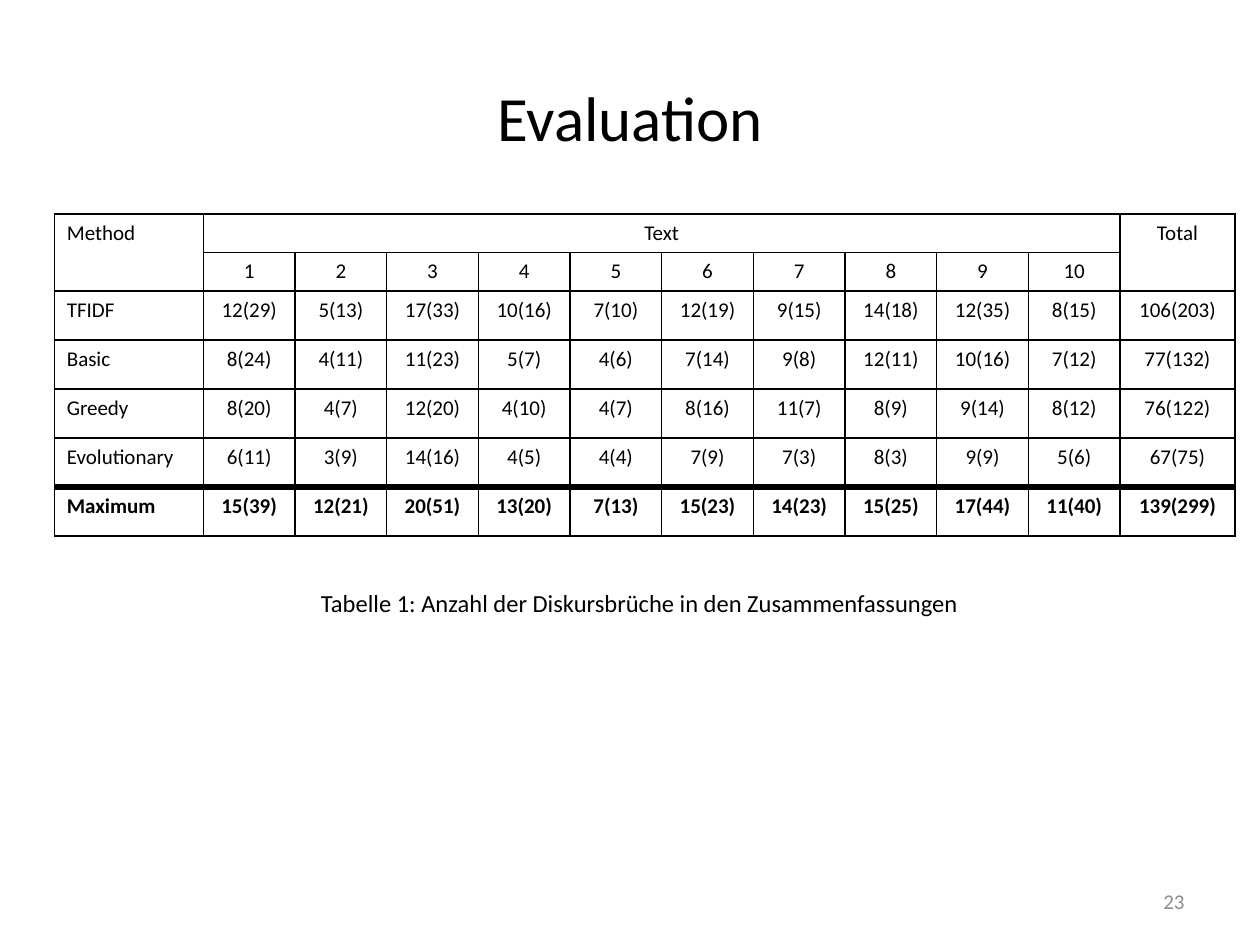
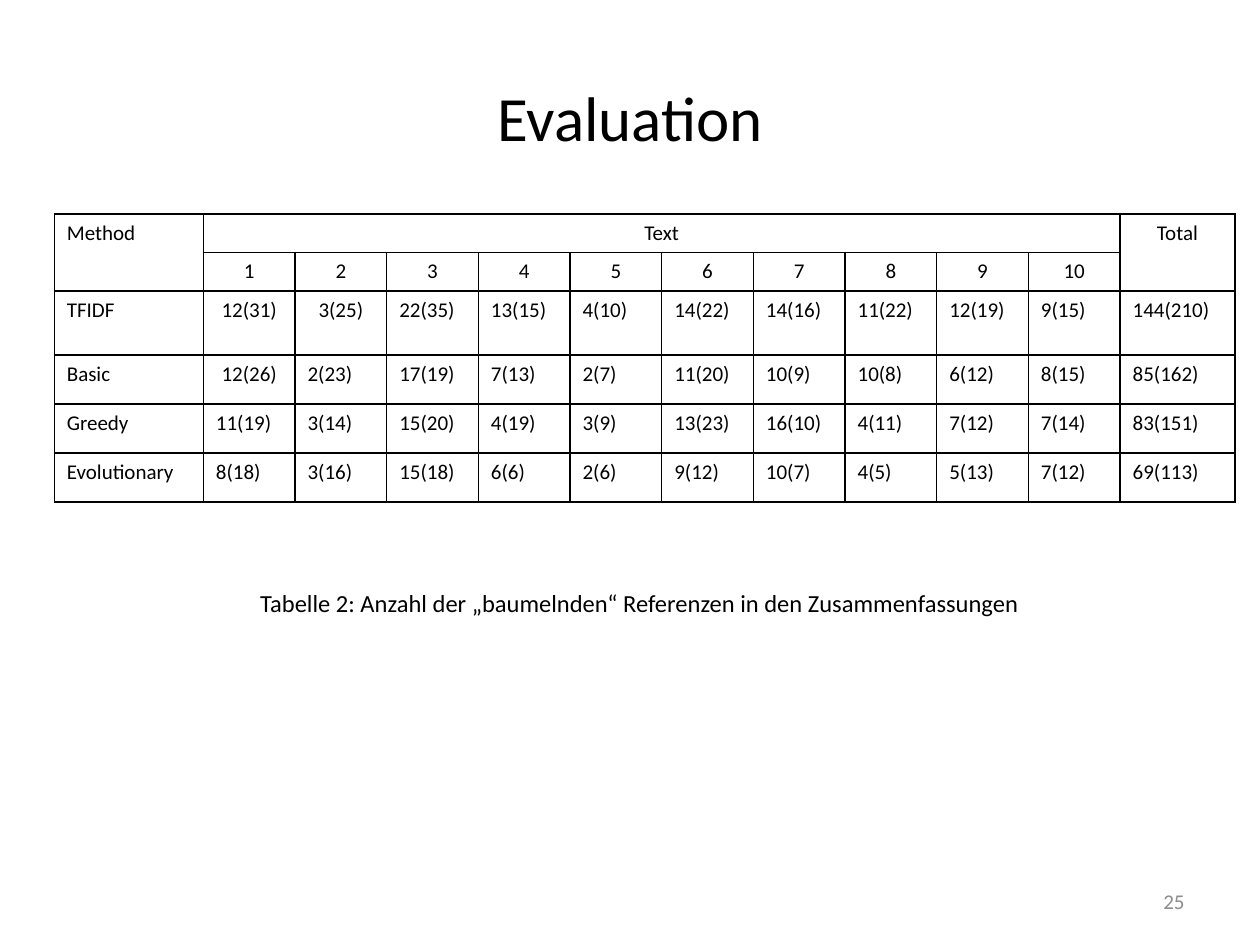
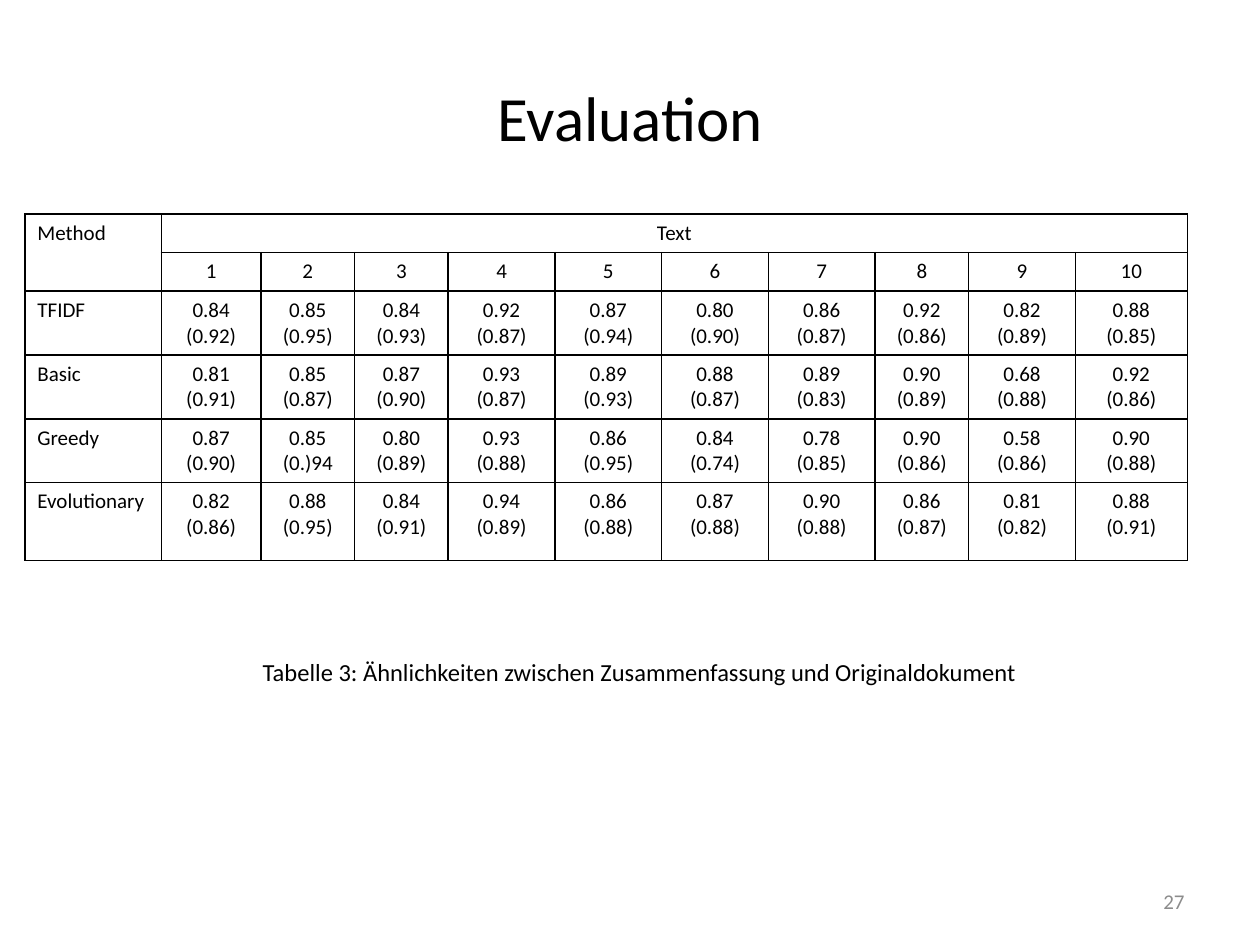
from dataclasses import dataclass
from itertools import product

from lxml.etree import SubElement
from pptx import Presentation
from pptx.dml.color import RGBColor
from pptx.enum.text import MSO_ANCHOR as Anchor, MSO_AUTO_SIZE as AutoSize, PP_ALIGN as Align
from pptx.oxml import parse_xml
from pptx.oxml.ns import nsdecls, qn
from pptx.util import Pt


@dataclass(frozen=True)
class Theme:
    """Colours, type sizes and line widths shared by all slides."""
    font: str = "Calibri"
    ink: str = "000000"
    muted: str = "8C8C8C"
    title_size: float = 36
    caption_size: float = 14
    body_size: float = 12
    rule: float = 1
    heavy_rule: float = 4


@dataclass(frozen=True)
class Evaluation:
    """One table of results with its geometry, caption and page number."""
    page: int
    caption: str
    results: tuple
    left: float
    widths: tuple
    heights: tuple
    caption_top: float = 332.6
    centred: tuple = (10, 10, 10, 10, 10)
    total: bool = True
    stacked: bool = False


THEME = Theme()
TEXT_COUNT = 10
HEADER_ROWS = 2
HEADER_HEIGHTS = (22, 22)
TABLE_TOP = 122.4
COUNT_WIDTHS = (85.2, *[52.4] * TEXT_COUNT, 65.6)

EVALUATIONS = (
    Evaluation(
        page=23,
        caption="Tabelle 1: Anzahl der Diskursbrüche in den Zusammenfassungen",
        results=(
            "TFIDF 12(29) 5(13) 17(33) 10(16) 7(10) 12(19) 9(15) 14(18) 12(35) 8(15) 106(203)",
            "Basic 8(24) 4(11) 11(23) 5(7) 4(6) 7(14) 9(8) 12(11) 10(16) 7(12) 77(132)",
            "Greedy 8(20) 4(7) 12(20) 4(10) 4(7) 8(16) 11(7) 8(9) 9(14) 8(12) 76(122)",
            "Evolutionary 6(11) 3(9) 14(16) 4(5) 4(4) 7(9) 7(3) 8(3) 9(9) 5(6) 67(75)",
            "Maximum 15(39) 12(21) 20(51) 13(20) 7(13) 15(23) 14(23) 15(25) 17(44) 11(40) 139(299)",
        ),
        left=31, widths=COUNT_WIDTHS, heights=(28,) * 5, centred=(11,) * 5,
    ),
    Evaluation(
        page=25,
        caption="Tabelle 2: Anzahl der „baumelnden“ Referenzen in den Zusammenfassungen",
        results=(
            "TFIDF 12(31) 3(25) 22(35) 13(15) 4(10) 14(22) 14(16) 11(22) 12(19) 9(15) 144(210)",
            "Basic 12(26) 2(23) 17(19) 7(13) 2(7) 11(20) 10(9) 10(8) 6(12) 8(15) 85(162)",
            "Greedy 11(19) 3(14) 15(20) 4(19) 3(9) 13(23) 16(10) 4(11) 7(12) 7(14) 83(151)",
            "Evolutionary 8(18) 3(16) 15(18) 6(6) 2(6) 9(12) 10(7) 4(5) 5(13) 7(12) 69(113)",
        ),
        left=31, widths=COUNT_WIDTHS, heights=(36.5, 28, 28, 28), centred=(2, 1, 0, 0),
    ),
    Evaluation(
        page=27,
        caption="Tabelle 3: Ähnlichkeiten zwischen Zusammenfassung und Originaldokument",
        results=(
            "TFIDF 0.84(0.92) 0.85(0.95) 0.84(0.93) 0.92(0.87) 0.87(0.94)"
            " 0.80(0.90) 0.86(0.87) 0.92(0.86) 0.82(0.89) 0.88(0.85)",
            "Basic 0.81(0.91) 0.85(0.87) 0.87(0.90) 0.93(0.87) 0.89(0.93)"
            " 0.88(0.87) 0.89(0.83) 0.90(0.89) 0.68(0.88) 0.92(0.86)",
            "Greedy 0.87(0.90) 0.85(0.)94 0.80(0.89) 0.93(0.88) 0.86(0.95)"
            " 0.84(0.74) 0.78(0.85) 0.90(0.86) 0.58(0.86) 0.90(0.88)",
            "Evolutionary 0.82(0.86) 0.88(0.95) 0.84(0.91) 0.94(0.89) 0.86(0.88)"
            " 0.87(0.88) 0.90(0.88) 0.86(0.87) 0.81(0.82) 0.88(0.91)",
        ),
        left=14.2, widths=(78, 57, 53.5, 53.5, 61, 61, 61, 61, 53.5, 61, 64),
        heights=(36.5, 36.5, 36.5, 44.4), caption_top=372.2, total=False, stacked=True,
    ),
)


def apply_format(target, values):
    """Set each named attribute of the target."""
    for attribute, value in values.items():
        setattr(target, attribute, value)


def write(frame, wording, size, align, color=THEME.ink, bold=False):
    """Fill a text frame with uniformly formatted paragraphs."""
    frame.text = wording
    for paragraph in frame.paragraphs:
        paragraph.alignment = align
        for run in paragraph.runs:
            apply_format(run.font, {"name": THEME.font, "size": Pt(size), "bold": bold})
            run.font.color.rgb = RGBColor.from_string(color)


def add_label(slide, bounds, wording, size, align, layout, color=THEME.ink):
    """Add a wrapped line of text within bounds given in points."""
    frame = slide.shapes.add_textbox(*map(Pt, bounds)).text_frame
    apply_format(frame, {"word_wrap": True, **layout})
    write(frame, wording, size, align, color)


def rule_cell(cell, widths):
    """Clear the cell's fill and draw its four borders."""
    cell.fill.background()
    properties = cell._tc.get_or_add_tcPr()
    for position, side in enumerate("LRTB"):
        width = Pt(widths.get(side, THEME.rule))
        border = parse_xml(f'<a:ln{side} {nsdecls("a")} w="{width}"/>')
        solid = SubElement(border, qn("a:solidFill"))
        SubElement(solid, qn("a:srgbClr"), val=THEME.ink)
        properties.insert(position, border)


def add_header(table, has_total):
    """Merge and label the two header rows."""
    spans = [("Method", 0, 0, 1, 0, Align.LEFT), ("Text", 0, 1, 0, TEXT_COUNT, Align.CENTER)]
    if has_total:
        total_column = TEXT_COUNT + 1
        spans.append(("Total", 0, total_column, 1, total_column, Align.CENTER))
    for heading, top, left, bottom, right, align in spans:
        origin = table.cell(top, left)
        origin.merge(table.cell(bottom, right))
        write(origin.text_frame, heading, THEME.body_size, align)
    for number in range(1, TEXT_COUNT + 1):
        write(table.cell(1, number).text_frame, str(number), THEME.body_size, Align.CENTER)


def add_results(table, evaluation):
    """Write one row of values per summarisation method."""
    rows = zip(evaluation.results, evaluation.centred)
    for row, (result, centred) in enumerate(rows, HEADER_ROWS):
        method, *scores = result.split()
        for column, score in enumerate([method, *scores]):
            align = Align.CENTER if 1 <= column <= centred else Align.LEFT
            wording = score.replace("(", "\n(") if evaluation.stacked else score
            write(table.cell(row, column).text_frame, wording, THEME.body_size, align,
                  bold=method == "Maximum")


def add_evaluation_table(slide, evaluation):
    """Add the ruled table of one evaluation."""
    widths, heights = evaluation.widths, HEADER_HEIGHTS + evaluation.heights
    bounds = (evaluation.left, TABLE_TOP, sum(widths), sum(heights))
    table = slide.shapes.add_table(len(heights), len(widths), *map(Pt, bounds)).table
    apply_format(table, {"first_row": False, "horz_banding": False})
    for column, width in zip(table.columns, widths):
        column.width = Pt(width)
    for row, height in zip(table.rows, heights):
        row.height = Pt(height)
    add_header(table, evaluation.total)
    add_results(table, evaluation)

    heavy_sides = {}
    for row, result in enumerate(evaluation.results, HEADER_ROWS):
        if result.startswith("Maximum"):
            heavy_sides = {row - 1: {"B": THEME.heavy_rule}, row: {"T": THEME.heavy_rule}}
    for row, column in product(range(len(heights)), range(len(widths))):
        rule_cell(table.cell(row, column), heavy_sides.get(row, {}))


def add_evaluation_slide(deck, evaluation):
    """Add a slide with title, table, caption and page number."""
    slide = deck.slides.add_slide(deck.slide_layouts[6])
    middle = {"vertical_anchor": Anchor.MIDDLE}
    add_label(slide, (36, 21.6, 648, 90), "Evaluation", THEME.title_size, Align.CENTER, middle)
    add_evaluation_table(slide, evaluation)
    add_label(slide, (31, evaluation.caption_top, 669, 24.5), evaluation.caption,
              THEME.caption_size, Align.CENTER, {"auto_size": AutoSize.SHAPE_TO_FIT_TEXT})
    add_label(slide, (516, 500.5, 168, 28.75), str(evaluation.page),
              THEME.body_size, Align.RIGHT, middle, THEME.muted)


def main():
    """Build the evaluation deck."""
    deck = Presentation()
    apply_format(deck, {"slide_width": Pt(720), "slide_height": Pt(540)})
    for evaluation in EVALUATIONS:
        add_evaluation_slide(deck, evaluation)
    deck.save("out.pptx")


if __name__ == "__main__":
    main()
